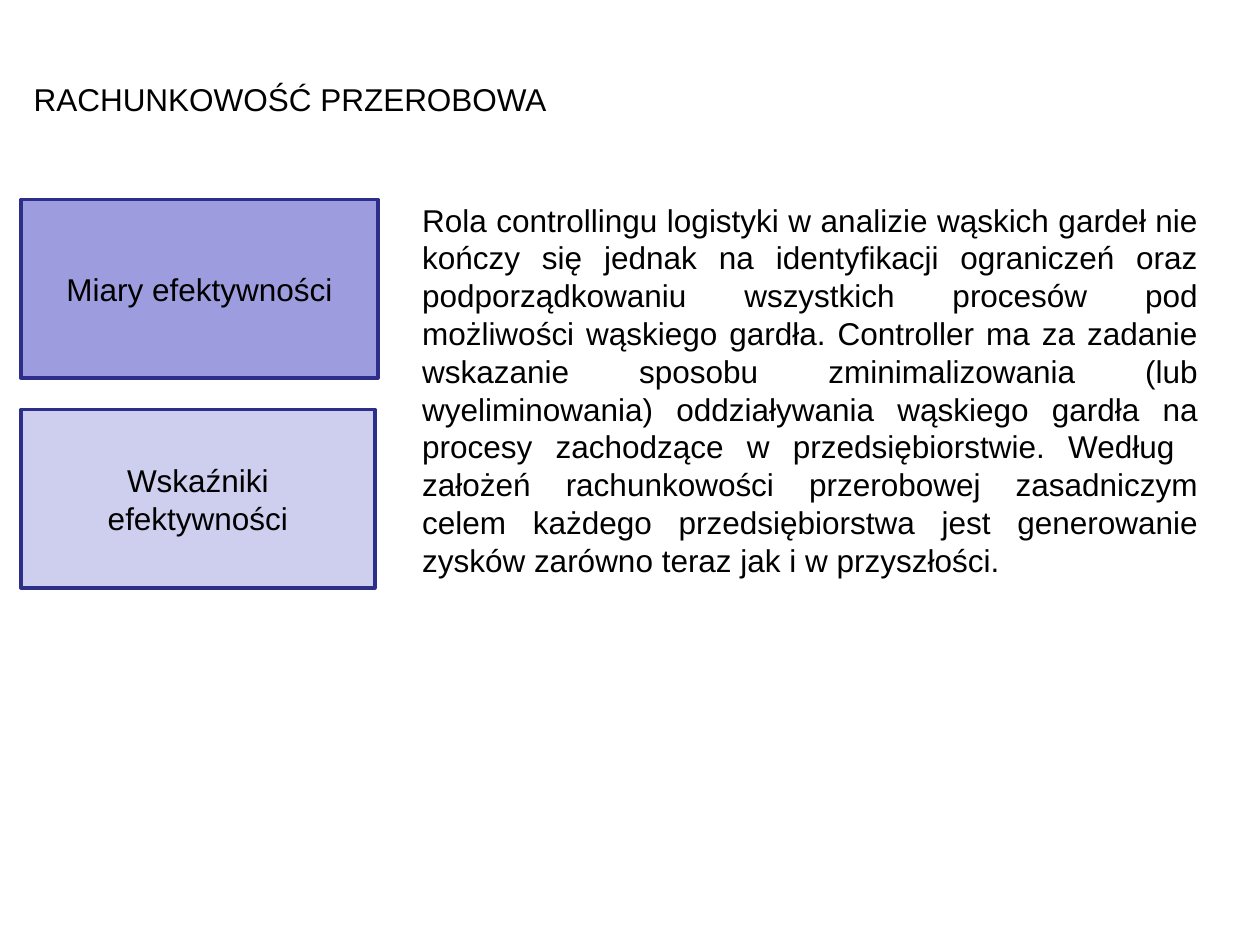
import pptx
import pptx.dml.color
import pptx.enum.shapes
import pptx.enum.text
import pptx.util
from pptx.oxml.xmlchemy import OxmlElement

RGBColor = pptx.dml.color.RGBColor
Align = pptx.enum.text.PP_ALIGN
Anchor = pptx.enum.text.MSO_ANCHOR

BLACK = RGBColor(0x00, 0x00, 0x00)
NAVY = RGBColor(0x2D, 0x2D, 0x8A)
VIOLET = RGBColor(0x9C, 0x9C, 0xDF)
LAVENDER = RGBColor(0xCE, 0xCE, 0xEF)

SLIDE_WIDTH = pptx.util.Inches(10)
SLIDE_HEIGHT = pptx.util.Inches(7.5)
COLUMNS, ROWS = 120, 90

TITLE_BOX = (2, 7, 94, 4.8)
BODY_BOX = (39, 18.5, 76.3, 37.5)
MEASURES_BOX = (2, 19, 34, 37)

TITLE = "RACHUNKOWOŚĆ PRZEROBOWA"
BODY = (
    "Rola controllingu logistyki w analizie wąskich gardeł nie kończy się jednak "
    "na identyfikacji ograniczeń oraz podporządkowaniu wszystkich procesów pod "
    "możliwości wąskiego gardła. Controller ma za zadanie wskazanie sposobu "
    "zminimalizowania (lub wyeliminowania) oddziaływania wąskiego gardła na "
    "procesy zachodzące w przedsiębiorstwie. Według  założeń rachunkowości "
    "przerobowej zasadniczym celem każdego przedsiębiorstwa jest generowanie "
    "zysków zarówno teraz jak i w przyszłości."
)
MEASURES = [
    ("Miary efektywności", VIOLET, 34),
    ("Wskaźniki efektywności", LAVENDER, 33.7),
]


def grid_to_lengths(box):
    left, top, width, height = box
    column, row = SLIDE_WIDTH / COLUMNS, SLIDE_HEIGHT / ROWS
    return [round(size) for size in (left * column, top * row, width * column, height * row)]


def write_text(shape, text, alignment, anchor):
    frame = shape.text_frame
    frame.text = text
    frame.word_wrap = True
    frame.auto_size = pptx.enum.text.MSO_AUTO_SIZE.NONE
    frame.vertical_anchor = anchor
    para = frame.paragraphs[0]
    para.alignment = alignment
    para.space_before = pptx.util.Pt(0)
    for span in para.runs:
        span.font.name = "Arial"
        span.font.size = pptx.util.Pt(18)
        span.font.color.rgb = BLACK
    return para


def place_placeholder(placeholder, box, text, alignment):
    (placeholder.left, placeholder.top,
     placeholder.width, placeholder.height) = grid_to_lengths(box)
    return write_text(placeholder, text, alignment, Anchor.TOP)


def add_title(page, box):
    place_placeholder(page.shapes.title, box, TITLE, Align.LEFT)


def add_body(page, box):
    para = place_placeholder(page.placeholders[1], box, BODY, Align.JUSTIFY)
    properties = para._p.get_or_add_pPr()
    properties.set("marL", "0")
    properties.set("indent", "0")
    properties.append(OxmlElement("a:buNone"))


def add_measures(page, box):
    left, top, full_width, total_height = box
    gap = 3
    height = (total_height - gap * (len(MEASURES) - 1)) / len(MEASURES)
    for index, (label, color, width) in enumerate(MEASURES):
        cell = (left, top + index * (height + gap), min(width, full_width), height)
        panel = page.shapes.add_shape(
            pptx.enum.shapes.MSO_SHAPE.RECTANGLE, *grid_to_lengths(cell))
        panel.shadow.inherit = False
        panel.fill.solid()
        panel.fill.fore_color.rgb = color
        panel.line.color.rgb = NAVY
        panel.line.width = pptx.util.Pt(2)
        write_text(panel, label, Align.CENTER, Anchor.MIDDLE)


def main():
    deck = pptx.Presentation()
    deck.slide_width, deck.slide_height = SLIDE_WIDTH, SLIDE_HEIGHT
    page = deck.slides.add_slide(deck.slide_layouts[1])
    add_title(page, TITLE_BOX)
    add_body(page, BODY_BOX)
    add_measures(page, MEASURES_BOX)
    deck.save("out.pptx")


if __name__ == "__main__":
    main()
